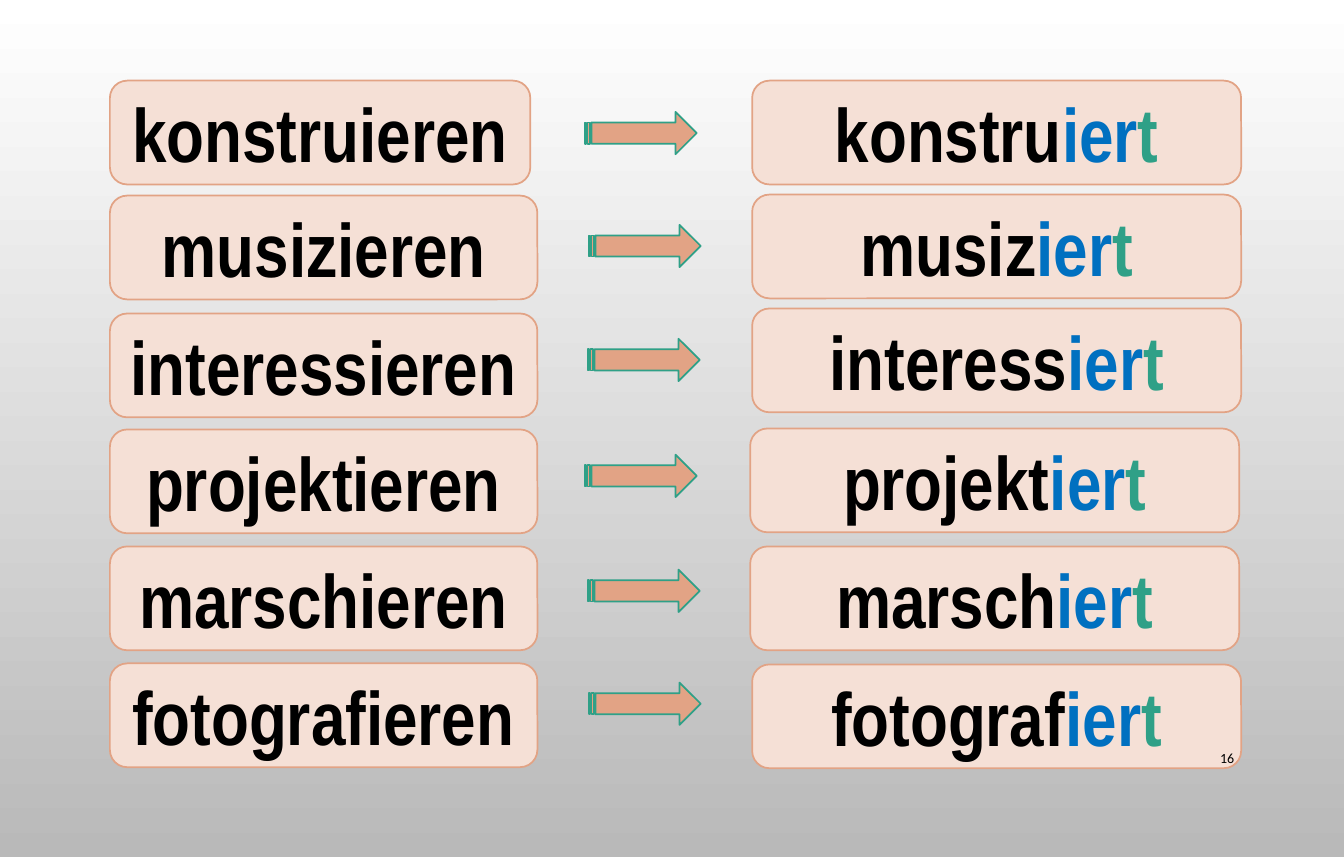
from typing import NamedTuple

import pptx
import pptx.dml.color
import pptx.enum.shapes
import pptx.enum.text
import pptx.shapes.autoshape
import pptx.slide
import pptx.util
from pptx.dml.color import RGBColor
from pptx.enum.shapes import MSO_SHAPE
from pptx.util import Inches

BLACK = RGBColor(0x00, 0x00, 0x00)
WHITE = RGBColor(0xFF, 0xFF, 0xFF)
GREY = RGBColor(0xB9, 0xB9, 0xB9)
PEACH = RGBColor(0xF5, 0xE0, 0xD6)
ORANGE = RGBColor(0xE2, 0xA3, 0x85)
BLUE = RGBColor(0x00, 0x70, 0xC0)
GREEN = RGBColor(0x2F, 0xA0, 0x87)

INFINITIVE_LEFT = 1.09
CARD_HEIGHT = 1.03
PARTICIPLE_WIDTH = 4.85
ARROW_WIDTH, ARROW_HEIGHT = 1.11, 0.42


class Verb(NamedTuple):
    stem: str
    infinitive_top: float
    arrow_left: float
    arrow_top: float
    participle_left: float
    participle_top: float
    infinitive_width: float = 4.24


VERBS = [
    Verb("konstru", 0.8, 5.8, 1.11, 7.46, 0.8, infinitive_width=4.17),
    Verb("musiz", 1.94, 5.84, 2.23, 7.46, 1.93),
    Verb("interess", 3.11, 5.83, 3.36, 7.46, 3.06),
    Verb("projekt", 4.26, 5.8, 4.51, 7.44, 4.25),
    Verb("marsch", 5.42, 5.83, 5.65, 7.44, 5.42),
    Verb("fotograf", 6.58, 5.84, 6.77, 7.46, 6.59),
]


def add_outlined(slide: pptx.slide.Slide, kind: MSO_SHAPE, left: float, top: float,
                 width: float, height: float, fill: RGBColor,
                 outline: RGBColor) -> pptx.shapes.autoshape.Shape:
    shape = slide.shapes.add_shape(
        kind, Inches(left), Inches(top), Inches(width), Inches(height))
    shape.shadow.inherit = False
    shape.fill.solid()
    shape.fill.fore_color.rgb = fill
    shape.line.color.rgb = outline
    shape.line.width = pptx.util.Pt(1.25)
    return shape


def add_card(slide: pptx.slide.Slide, left: float, top: float, width: float,
             parts: list[tuple[str, RGBColor]]) -> None:
    """Draw a rounded card whose word is made of coloured parts."""
    card = add_outlined(slide, MSO_SHAPE.ROUNDED_RECTANGLE, left, top, width,
                        CARD_HEIGHT, PEACH, ORANGE)
    card.text_frame.vertical_anchor = pptx.enum.text.MSO_ANCHOR.MIDDLE
    word = card.text_frame.paragraphs[0]
    word.alignment = pptx.enum.text.PP_ALIGN.CENTER
    for text, color in parts:
        run = word.add_run()
        run.text = text
        run.font.name = "Arial Narrow"
        run.font.size = pptx.util.Pt(54)
        run.font.bold = True
        run.font.color.rgb = color


def add_verb(slide: pptx.slide.Slide, verb: Verb) -> None:
    add_card(slide, INFINITIVE_LEFT, verb.infinitive_top, verb.infinitive_width,
             [(verb.stem + "ieren", BLACK)])
    add_outlined(slide, MSO_SHAPE.STRIPED_RIGHT_ARROW, verb.arrow_left,
                 verb.arrow_top, ARROW_WIDTH, ARROW_HEIGHT, ORANGE, GREEN)
    add_card(slide, verb.participle_left, verb.participle_top, PARTICIPLE_WIDTH,
             [(verb.stem, BLACK), ("ier", BLUE), ("t", GREEN)])


def add_page_number(slide: pptx.slide.Slide, number: str) -> None:
    box = slide.shapes.add_textbox(
        Inches(11.5), Inches(7.29), Inches(0.84), Inches(0.45))
    box.text_frame.word_wrap = True
    box.text_frame.vertical_anchor = pptx.enum.text.MSO_ANCHOR.MIDDLE
    box.text_frame.text = number
    paragraph = box.text_frame.paragraphs[0]
    paragraph.alignment = pptx.enum.text.PP_ALIGN.RIGHT
    font = paragraph.runs[0].font
    font.name = "Calibri"
    font.size = pptx.util.Pt(10)
    font.color.rgb = BLACK


def paint_background(slide: pptx.slide.Slide) -> None:
    fill = slide.background.fill
    fill.gradient()
    fill.gradient_angle = 270
    for stop, position, color in zip(fill.gradient_stops, (0, 1), (WHITE, GREY)):
        stop.position = position
        stop.color.rgb = color


def main() -> None:
    presentation = pptx.Presentation()
    presentation.slide_width = Inches(13.33)
    presentation.slide_height = Inches(8.5)
    slide = presentation.slides.add_slide(presentation.slide_layouts[6])
    paint_background(slide)
    for verb in VERBS:
        add_verb(slide, verb)
    add_page_number(slide, "16")
    presentation.save("out.pptx")


if __name__ == "__main__":
    main()
